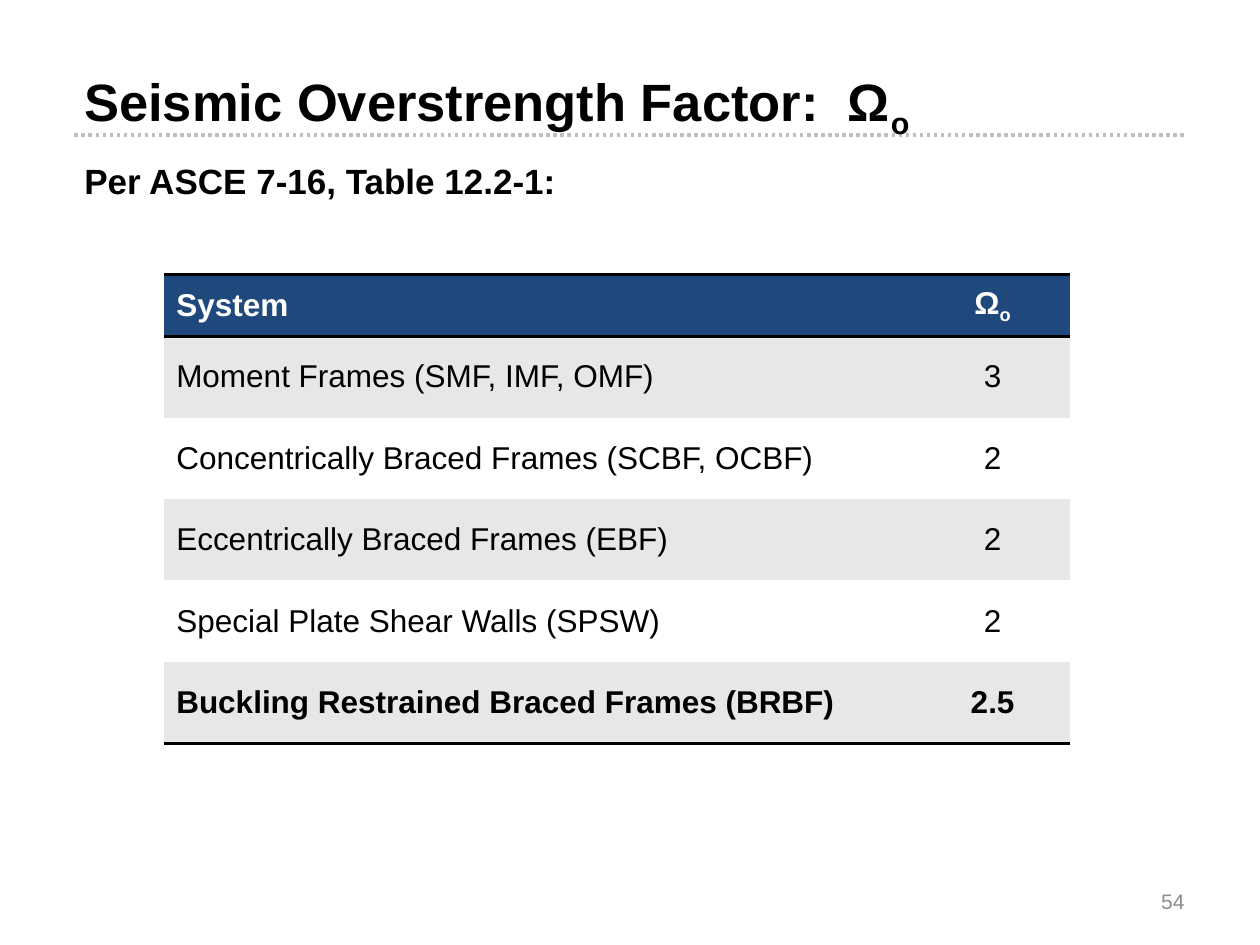
"""Build the seismic overstrength factor slide."""
from lxml import etree
from pptx import Presentation, util as u
from pptx.dml.color import RGBColor
from pptx.enum import dml, shapes, text
from pptx.oxml.ns import qn

INK = {"black": "000000", "white": "FFFFFF", "navy": "1F497D",
       "band": "E7E7E7", "rule": "BFBFBF", "gray": "8C8C8C"}
PLAIN = "{2D5ABB26-0587-4C30-8999-92F81FD0307C}"
ROWS = [("System", "Ω"),
        ("Moment Frames (SMF, IMF, OMF)", "3"),
        ("Concentrically Braced Frames (SCBF, OCBF)", "2"),
        ("Eccentrically Braced Frames (EBF)", "2"),
        ("Special Plate Shear Walls (SPSW)", "2"),
        ("Buckling Restrained Braced Frames (BRBF)", "2.5")]


def tint(name):
    """Return the named colour."""
    return RGBColor.from_string(INK[name])


def write(frame, words, size, ink="black", bold=False, align="LEFT", sub=""):
    """Set one paragraph of text, with an optional subscript."""
    frame.text = words
    para = frame.paragraphs[0]
    para.alignment = getattr(text.PP_ALIGN, align)
    if sub:
        low = para.add_run()
        low.text = sub
        low.font._element.set("baseline", "-25000")
    for run in para.runs:
        run.font.name = "Arial"
        run.font.size = u.Pt(size)
        run.font.bold = bold
        run.font.color.rgb = tint(ink)


def add_text(slide, box, words, size, anchor="TOP", **style):
    """Add a wrapped text box at a box given in centimetres."""
    frame = slide.shapes.add_textbox(*map(u.Cm, box)).text_frame
    frame.word_wrap = True
    frame.vertical_anchor = getattr(text.MSO_ANCHOR, anchor)
    write(frame, words, size, **style)


def add_rule(slide, left, right, top):
    """Add the dotted rule under the title."""
    rule = slide.shapes.add_connector(
        shapes.MSO_CONNECTOR.STRAIGHT, u.Cm(left), u.Cm(top), u.Cm(right), u.Cm(top))
    rule.line.color.rgb = tint("rule")
    rule.line.width = u.Pt(2)
    rule.line.dash_style = dml.MSO_LINE.ROUND_DOT
    etree.SubElement(rule._element.spPr, qn("a:effectLst"))


def add_edge(cell, side):
    """Draw a black border on one side of a filled cell."""
    edge = etree.Element(qn(f"a:ln{side}"), w=str(u.Pt(2)))
    fill = etree.SubElement(edge, qn("a:solidFill"))
    etree.SubElement(fill, qn("a:srgbClr"), val=INK["black"])
    props = cell._tc.get_or_add_tcPr()
    props.insert(len(props) - 1, edge)


def add_grid(slide):
    """Add the table of systems and their factors."""
    wides, head, tall = (15.16, 3.1), 1.24, 1.64
    last = len(ROWS) - 1
    grid = slide.shapes.add_table(
        len(ROWS), 2, u.Cm(3.3), u.Cm(5.54),
        u.Cm(sum(wides)), u.Cm(head + last * tall)).table
    grid._tbl.tblPr.find(qn("a:tableStyleId")).text = PLAIN
    for col, wide in zip(grid.columns, wides):
        col.width = u.Cm(wide)
    for r, row in enumerate(ROWS):
        top = r == 0
        grid.rows[r].height = u.Cm(head if top else tall)
        for c, words in enumerate(row):
            cell = grid.cell(r, c)
            cell.vertical_anchor = text.MSO_ANCHOR.MIDDLE
            cell.fill.solid()
            cell.fill.fore_color.rgb = tint(
                "navy" if top else "band" if r % 2 else "white")
            write(cell.text_frame, words, 18, ink="white" if top else "black",
                  bold=r in (0, last), align="CENTER" if c else "LEFT",
                  sub="o" if top and c else "")
            for side in "TB" if top else "B" if r == last else "":
                add_edge(cell, side)


def main():
    """Build and save the slide."""
    deck = Presentation()
    deck.slide_width, deck.slide_height = u.Cm(25.4), u.Cm(19.05)
    slide = deck.slides.add_slide(deck.slide_layouts[6])
    add_rule(slide, 1.5, 23.9, 2.72)
    add_text(slide, (1.45, 1.27, 22.81, 1.73), "Seismic Overstrength Factor:  Ω",
             30, bold=True, sub="o")
    add_text(slide, (18.21, 17.65, 5.92, 1.02), "54", 12, anchor="MIDDLE",
             ink="gray", align="RIGHT")
    add_grid(slide)
    add_text(slide, (1.45, 3.1, 22.81, 1.24), "Per ASCE 7-16, Table 12.2-1:",
             20, bold=True)
    deck.save("out.pptx")


if __name__ == "__main__":
    main()
